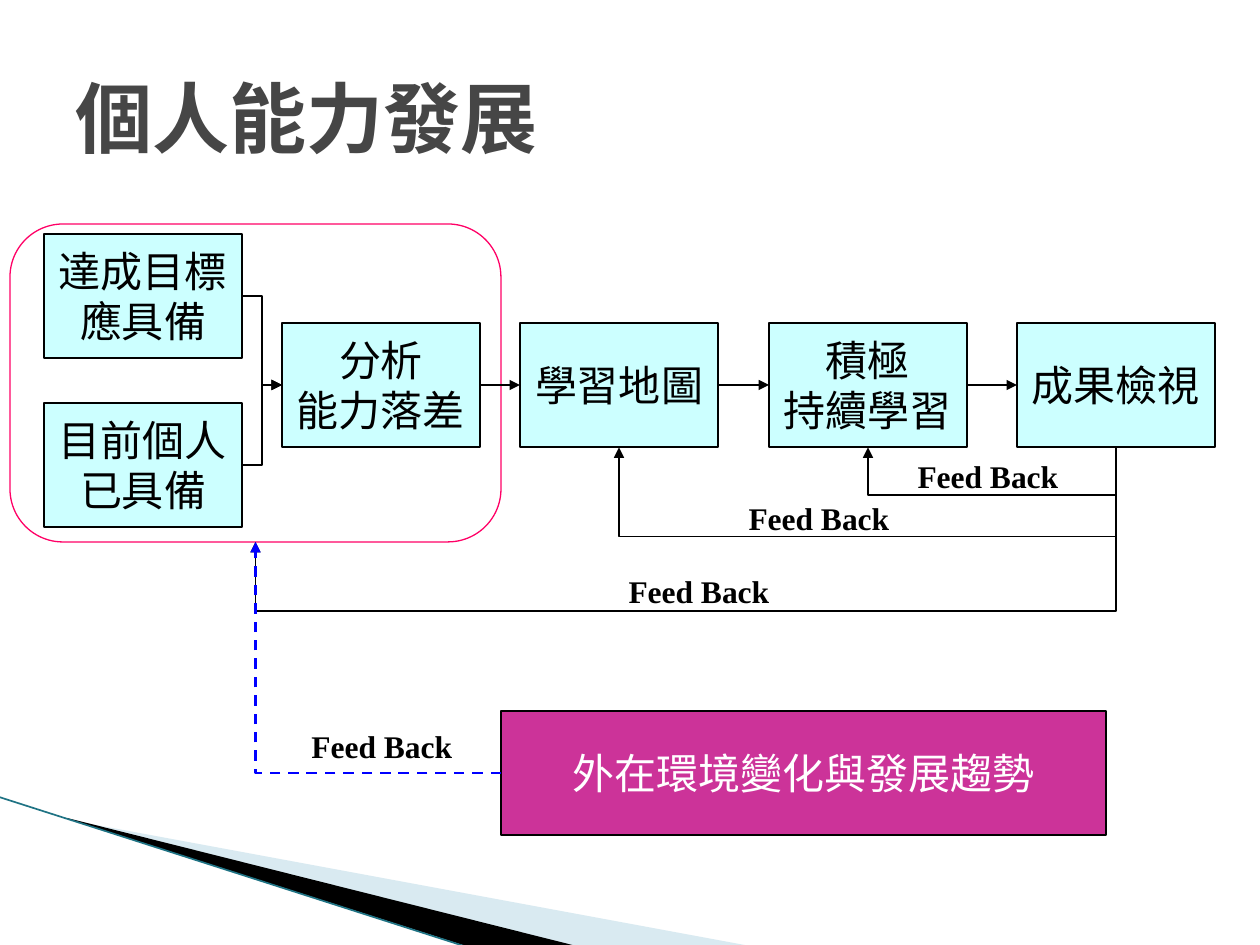
import pptx
import pptx.dml.color
import pptx.enum.dml
import pptx.enum.shapes
import pptx.enum.text
import pptx.oxml
import pptx.oxml.ns
import pptx.util
from dataclasses import dataclass

PX = 914400 / 126
TOP, LEFT, BOTTOM, RIGHT = range(4)
KIND = pptx.enum.shapes.MSO_CONNECTOR
SHAPE = pptx.enum.shapes.MSO_SHAPE
ALIGN = pptx.enum.text.PP_ALIGN
MIDDLE = pptx.enum.text.MSO_ANCHOR.MIDDLE


@dataclass(frozen=True)
class Theme:
    title: str = "464646"
    ink: str = "000000"
    white: str = "FFFFFF"
    step: str = "CCFFFF"
    group: str = "FF0066"
    environment: str = "CC3399"
    outside: str = "0000FF"
    wave: str = "A0CBDC"
    edge: str = "1F7384"
    title_font: str = "Noto Sans CJK SC"
    step_font: str = "Cambria"
    label_font: str = "Times New Roman"
    title_size: int = 44
    step_size: int = 24
    label_size: int = 18
    thin: float = 0.75
    thick: float = 1.5


THEME = Theme()


def px(*values):
    return [pptx.util.Emu(round(v * PX)) for v in values]


def rgb(value):
    return pptx.dml.color.RGBColor.from_string(value)


def add_xml(parent, tag, **attributes):
    el = pptx.oxml.parse_xml(f"<a:{tag} {pptx.oxml.ns.nsdecls('a')}/>")
    for name, value in attributes.items():
        el.set(name, str(value))
    parent.append(el)


def set_text(sp, text, font, size, color, bold=False, align=ALIGN.CENTER):
    tf = sp.text_frame
    tf.text = text
    for p in tf.paragraphs:
        p.alignment = align
        for r in p.runs:
            r.font.name, r.font.size, r.font.bold = font, pptx.util.Pt(size), bold
            r.font.color.rgb = rgb(color)
    return tf


def add_box(s, box, line, fill=None, kind=SHAPE.RECTANGLE):
    sp = s.shapes.add_shape(kind, *px(*box))
    sp.shadow.inherit = False
    if fill:
        sp.fill.solid()
        sp.fill.fore_color.rgb = rgb(fill)
    else:
        sp.fill.background()
    sp.line.color.rgb = rgb(line)
    sp.line.width = pptx.util.Pt(THEME.thin)
    return sp


def add_step(s, box, text, fill=THEME.step, color=THEME.ink):
    sp = add_box(s, box, THEME.ink, fill)
    tf = set_text(sp, text, THEME.step_font, THEME.step_size, color)
    tf.word_wrap = False
    tf.vertical_anchor = MIDDLE
    return sp


def add_line(s, kind, ends, color, width):
    c = s.shapes.add_connector(kind, *px(*ends))
    c.line.color.rgb = rgb(color)
    c.line.width = pptx.util.Pt(width)
    add_xml(c._element.spPr, "effectLst")
    return c


def join(s, kind, start, start_side, end, end_side, color=THEME.ink, width=THEME.thin):
    """Arrow from a side of one shape to a side of another."""
    c = add_line(s, kind, (0, 0, 0, 0), color, width)
    c.begin_connect(start, start_side)
    c.end_connect(end, end_side)
    add_xml(c.line._get_or_add_ln(), "tailEnd", type="triangle")
    return c


def turn(c, degrees):
    """Replace the flips of a connector by a rotation."""
    xfrm = c._element.spPr.xfrm
    for flip in ("flipH", "flipV"):
        xfrm.attrib.pop(flip, None)
    xfrm.set("rot", str(degrees * 60000))


def add_feedback(s, start, end, drop):
    """Route below both shapes, drop px under the start, as a quarter-turned elbow."""
    c = join(s, KIND.ELBOW, start, BOTTOM, end, BOTTOM)
    x1, y1, x2, y2 = c.begin_x, c.begin_y, c.end_x, c.end_y
    w, h = max(y2 - y1, round(PX)), x1 - x2
    turn(c, 90)
    c.left, c.top = (x1 + x2 - w) // 2, (y1 + y2 - h) // 2
    c.width, c.height = w, h
    guides = c._element.spPr.find(pptx.oxml.ns.qn("a:prstGeom")).get_or_add_avLst()
    add_xml(guides, "gd", name="adj1", fmla=f"val {round(drop * PX / w * 100000)}")


def add_label(s, left, line_y):
    """Label whose text stands just above the line at line_y."""
    sp = s.shapes.add_textbox(*px(left, line_y - 45, 318, 50))
    tf = set_text(sp, "Feed Back", THEME.label_font, THEME.label_size, THEME.ink, True)
    tf.word_wrap = True


def add_wave(s, left, top):
    """Swept bands in the lower left corner."""
    bands = [
        (THEME.wave, 40, [(69, 23), (750, 149), (575, 149), (69, 22)]),
        (THEME.ink, 100, [(67, 21), (576, 149), (469, 150), (68, 22)]),
    ]
    for color, opacity, points in bands:
        points = [(left + x, top + y) for x, y in points]
        builder = s.shapes.build_freeform(*points[0], scale=PX)
        builder.add_line_segments(points[1:], close=True)
        sp = builder.convert_to_shape()
        sp.shadow.inherit = False
        sp.fill.solid()
        sp.fill.fore_color.rgb = rgb(color)
        sp.line.fill.background()
        if opacity < 100:
            tone = sp._element.spPr.find(".//" + pptx.oxml.ns.qn("a:srgbClr"))
            add_xml(tone, "alpha", val=opacity * 1000)
    ends = (left - 1, top, left + 467, top + 150)
    add_line(s, KIND.STRAIGHT, ends, THEME.edge, 0.95)


def add_title(s, box, text):
    sp = s.shapes.title
    sp.left, sp.top, sp.width, sp.height = px(*box)
    tf = set_text(sp, text, THEME.title_font, THEME.title_size, THEME.title,
                  True, ALIGN.LEFT)
    tf.vertical_anchor = MIDDLE
    add_xml(tf.paragraphs[0].runs[0].font._element, "ea", typeface=THEME.title_font)


def add_flow(s, left, top):
    """Gap analysis group, the steps after it and the feedback routes."""
    w, h, row = 198, 124, 99

    def step(x, y, text):
        return add_step(s, (left + x, top + y, w, h), text)

    needed = step(34, 10, "達成目標\n應具備")
    current = step(34, 179, "目前個人\n已具備")
    gap = step(272, row, "分析\n能力落差")
    learning_map = step(510, row, "學習地圖")
    learning = step(759, row, "積極\n持續學習")
    review = step(1007, row, "成果檢視")
    group = add_box(s, (left, top, 491, 318), THEME.group, kind=SHAPE.ROUNDED_RECTANGLE)

    for source in (needed, current):
        join(s, KIND.ELBOW, source, RIGHT, gap, LEFT)
    steps = [gap, learning_map, learning, review]
    for a, b in zip(steps, steps[1:]):
        join(s, KIND.STRAIGHT, a, RIGHT, b, LEFT)
    for target, drop, x in ((learning_map, 91, 650), (learning, 49, 819),
                            (group, 164, 530)):
        add_feedback(s, review, target, drop)
        add_label(s, left + x, top + row + h + drop)
    return group


def add_environment(s, box, group):
    left, top, width, height = box
    sp = add_step(s, box, "外在環境變化與發展趨勢", THEME.environment, THEME.white)
    c = join(s, KIND.ELBOW, sp, LEFT, group, BOTTOM, THEME.outside, THEME.thick)
    c.line.dash_style = pptx.enum.dml.MSO_LINE.DASH
    c._element.spPr.find(pptx.oxml.ns.qn("a:prstGeom")).set("prst", "bentConnector2")
    turn(c, 180)
    add_label(s, left - 278, top + height // 2 - 7)


def main():
    prs = pptx.Presentation()
    prs.slide_width, prs.slide_height = px(1260, 945)
    s = prs.slides.add_slide(prs.slide_layouts[5])
    add_wave(s, 0, 797)
    add_title(s, (63, 38, 1134, 158), "個人能力發展")
    group = add_flow(s, 10, 224)
    add_environment(s, (501, 711, 605, 124), group)
    prs.save("out.pptx")


if __name__ == "__main__":
    main()
